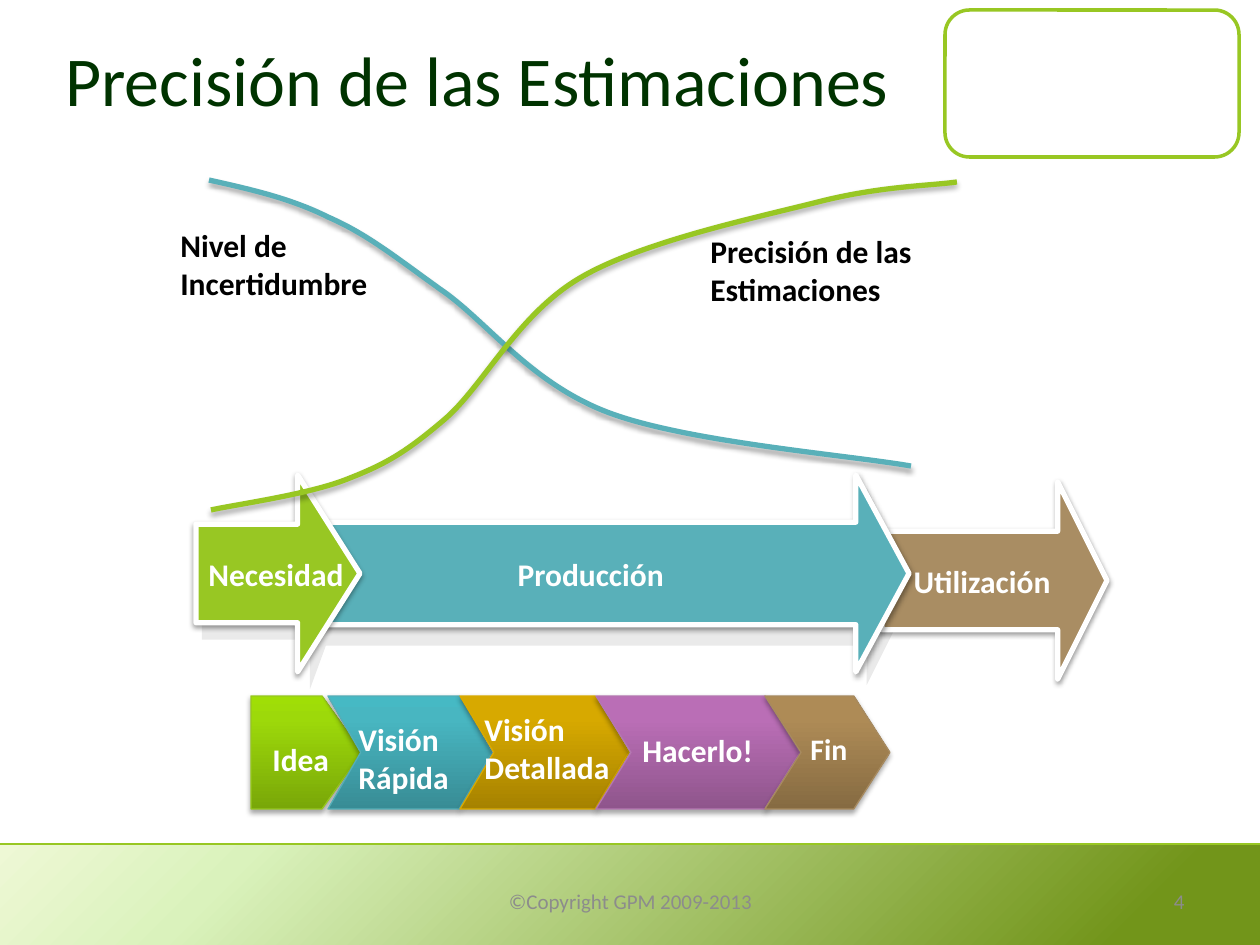
from itertools import chain

from lxml import etree
from pptx import Presentation
from pptx import util as u
from pptx.dml.color import RGBColor
from pptx.enum import shapes, text
from pptx.oxml.ns import qn

PX = 914400 / 126
FONT = "Calibri"
WHITE = RGBColor(0xFF, 0xFF, 0xFF)
BLACK = RGBColor(0, 0, 0)
GREEN = RGBColor(0x98, 0xC7, 0x23)
TEAL = RGBColor(0x59, 0xB0, 0xB9)
BROWN = RGBColor(0xA9, 0x8D, 0x63)
DARK_GREEN = RGBColor(0, 0x33, 0)
PALE_GREY = RGBColor(0xEA, 0xEA, 0xEA)
FOOTER_GREY = RGBColor(0x8C, 0x8C, 0x8C)

KIND = shapes.MSO_SHAPE
LEFT, CENTER, RIGHT = text.PP_ALIGN.LEFT, text.PP_ALIGN.CENTER, text.PP_ALIGN.RIGHT
TOP, MIDDLE = text.MSO_ANCHOR.TOP, text.MSO_ANCHOR.MIDDLE

FOOTER_STOPS = [(0, "EEF8D5"), (19, "DAF2BC"), (89, "72951A")]

# box, adjustments
ARROW_GHOSTS = [
    ((315, 488, 601, 197), (0.6, 0.25)),
    ((202, 492, 144, 197), (0.5, 0.25)),
]

# label, box, adjustments, fill, alignment
PHASES = [
    ("Utilización", (882, 482, 225, 197), (0.5, 0.25), BROWN, CENTER),
    ("Producción", (300, 475, 609, 197), (0.52, 0.27), TEAL, CENTER),
    ("Necesidad", (196, 475, 164, 197), (0.5, 0.38), GREEN, LEFT),
]

# left, width, point depth, gradient from bottom to top, line
STEP_TOP, STEP_HEIGHT = 696, 113
STEPS = [
    (251, 111, 0.36, ("79A708", "9DD90A", "A0DE06"), RGBColor(0x96, 0xC7, 0x1E)),
    (328, 164, 0.29, ("388C95", "48B6C1", "46B9C4"), RGBColor(0x55, 0xAE, 0xB7)),
    (460, 169, 0.3, ("A68200", "D7A900", "D8A900"), RGBColor(0xD9, 0xAA, 0)),
    (596, 204, 0.31, ("8F558C", "BA6EB6", "BC6EB8"), RGBColor(0xB4, 0x77, 0xB1)),
    (765, 125, 0.32, ("866B42", "AE8B56", "B08C54"), RGBColor(0xA7, 0x8A, 0x5F)),
]

# label, box, size, wrap
STEP_LABELS = [
    ("Idea", (260, 734, 82, 50), 18, False),
    ("Visión Rápida", (346, 714, 132, 89), 18, True),
    ("Visión Detallada", (472, 704, 158, 89), 18, True),
    ("Hacerlo!", (630, 725, 137, 50), 18, False),
    ("Fin", (798, 725, 63, 49), 17, False),
]

# label, label box, colour, start, Bézier segments (two controls and an end)
CURVES = [
    ("Nivel de Incertidumbre", (168, 220, 263, 89), TEAL, (209, 180), [
        ((249, 189), (290, 198), (328, 217)),
        ((367, 234), (394, 256), (440, 289)),
        ((486, 320), (529, 382), (607, 412)),
        ((685, 442), (848, 455), (911, 466)),
    ]),
    ("Precisión de las Estimaciones", (698, 226, 263, 89), GREEN, (211, 510), [
        ((233, 505), (306, 495), (345, 480)),
        ((384, 465), (404, 454), (444, 420)),
        ((483, 387), (517, 315), (580, 278)),
        ((641, 242), (755, 218), (818, 202)),
        ((881, 186), (929, 186), (957, 182)),
    ]),
]


def emu(*lengths):
    return [u.Emu(round(length * PX)) for length in lengths]


def set_line(shape, color, width):
    shape.line.color.rgb = color
    shape.line.width = u.Pt(width)


def set_gradient(shape, stops, angle):
    """Fill with (percent, hex) stops; the angle runs clockwise in degrees."""
    shape.fill.gradient()
    gradient = shape._element.spPr.find(qn("a:gradFill"))
    gradient.clear()
    stop_list = etree.SubElement(gradient, qn("a:gsLst"))
    for percent, color in stops:
        stop = etree.SubElement(stop_list, qn("a:gs"), pos=str(percent * 1000))
        etree.SubElement(stop, qn("a:srgbClr"), val=color)
    etree.SubElement(gradient, qn("a:lin"), ang=str(angle * 60000), scaled="0")


def add_shadow(shape, opacity, distance):
    effects = shape._element.spPr.find(qn("a:effectLst"))
    shadow = etree.SubElement(
        effects, qn("a:outerShdw"), blurRad=str(u.Pt(3.1)),
        dist=str(u.Pt(distance)), dir="5400000", rotWithShape="0")
    color = etree.SubElement(shadow, qn("a:srgbClr"), val="000000")
    etree.SubElement(color, qn("a:alpha"), val=str(opacity * 1000))


def add_shape(slide, kind, box, adjustments=()):
    shape = slide.shapes.add_shape(kind, *emu(*box))
    shape.shadow.inherit = False
    for index, value in enumerate(adjustments):
        shape.adjustments[index] = value
    return shape


def write(shape, words, size, color, bold=False, align=LEFT, anchor=TOP, wrap=True):
    frame = shape.text_frame
    frame.word_wrap = wrap
    frame.vertical_anchor = anchor
    paragraph = frame.paragraphs[0]
    paragraph.alignment = align
    run = paragraph.add_run()
    run.text = words
    run.font.name = FONT
    run.font.size = u.Pt(size)
    run.font.bold = bold
    run.font.color.rgb = color


def add_text(slide, box, *args, **options):
    write(slide.shapes.add_textbox(*emu(*box)), *args, **options)


def add_curve(slide, start, segments, color):
    """Lay the control points out as lines, then turn each three into a Bézier."""
    builder = slide.shapes.build_freeform(*start, scale=PX)
    builder.add_line_segments(list(chain.from_iterable(segments)), close=False)
    curve = builder.convert_to_shape()
    lines = list(curve._element.iter(qn("a:lnTo")))
    outline = lines[0].getparent()
    for first in range(0, len(lines), 3):
        bezier = etree.SubElement(outline, qn("a:cubicBezTo"))
        for line in lines[first:first + 3]:
            bezier.append(line[0])
            outline.remove(line)
    curve.shadow.inherit = False
    curve.fill.background()
    set_line(curve, color, 3)
    add_shadow(curve, 35, 1.8)


def add_frame(slide):
    corner = add_shape(slide, KIND.ROUNDED_RECTANGLE, (945, 10, 294, 147))
    corner.fill.solid()
    corner.fill.fore_color.rgb = WHITE
    set_line(corner, GREEN, 2)
    footer = add_shape(slide, KIND.RECTANGLE, (0, 845, 1260, 103))
    set_gradient(footer, FOOTER_STOPS, 45)
    footer.line.fill.background()
    rule = slide.shapes.add_connector(
        shapes.MSO_CONNECTOR.STRAIGHT, *emu(0, 844, 1260, 844))
    set_line(rule, GREEN, 1.5)
    etree.SubElement(rule._element.spPr, qn("a:effectLst"))
    add_text(slide, (53, 0, 851, 157), "Precisión de las Estimaciones", 40,
             DARK_GREEN, anchor=MIDDLE)


def add_steps(slide):
    for index, (left, width, depth, colors, line) in enumerate(STEPS):
        kind = KIND.CHEVRON if index else KIND.PENTAGON
        step = add_shape(slide, kind, (left, STEP_TOP, width, STEP_HEIGHT), [depth])
        set_gradient(step, zip((0, 80, 100), colors), 270)
        set_line(step, line, 0.75)
        add_shadow(step, 35, 1.8)
    for label, box, size, wrap in STEP_LABELS:
        add_text(slide, box, label, size, WHITE, bold=True, wrap=wrap)


def add_arrow(slide, box, adjustments, color):
    arrow = add_shape(slide, KIND.RIGHT_ARROW, box, adjustments)
    arrow.fill.solid()
    arrow.fill.fore_color.rgb = color
    return arrow


def main():
    presentation = Presentation()
    presentation.slide_width, presentation.slide_height = emu(1260, 945)
    slide = presentation.slides.add_slide(presentation.slide_layouts[6])

    add_frame(slide)
    for box, adjustments in ARROW_GHOSTS:
        add_arrow(slide, box, adjustments, PALE_GREY).line.fill.background()
    add_steps(slide)
    for label, box, adjustments, color, align in PHASES:
        arrow = add_arrow(slide, box, adjustments, color)
        set_line(arrow, WHITE, 3)
        add_shadow(arrow, 38, 1.6)
        write(arrow, label, 18, WHITE, bold=True, align=align, anchor=MIDDLE, wrap=False)
    for label, box, color, start, segments in CURVES:
        add_curve(slide, start, segments, color)
        add_text(slide, box, label, 18, BLACK, bold=True)
    add_text(slide, (431, 876, 399, 50), "©Copyright GPM 2009-2013", 12,
             FOOTER_GREY, align=CENTER, anchor=MIDDLE)
    add_text(slide, (903, 876, 294, 50), "4", 12,
             FOOTER_GREY, align=RIGHT, anchor=MIDDLE)
    presentation.save("out.pptx")


if __name__ == "__main__":
    main()
